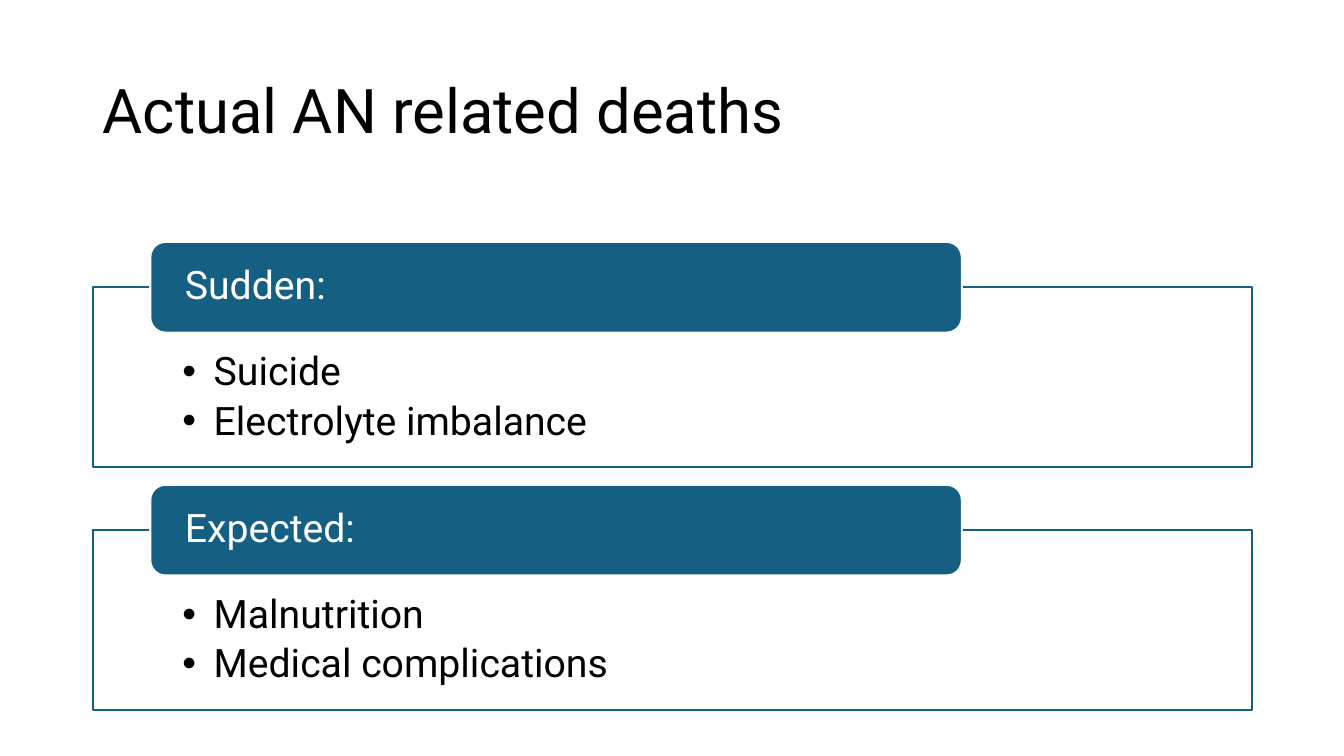
from lxml import etree
from pptx import Presentation
from pptx.dml.color import RGBColor
from pptx.enum.shapes import MSO_SHAPE
from pptx.enum.text import MSO_ANCHOR, PP_ALIGN
from pptx.oxml.ns import qn
from pptx.util import Inches, Pt

TITLE = "Actual AN related deaths"
GROUPS = [
    ("Sudden:", ["Suicide", "Electrolyte imbalance"]),
    ("Expected:", ["Malnutrition", "Medical complications"]),
]

BLUE = RGBColor(0x15, 0x60, 0x82)
WHITE = RGBColor(0xFF, 0xFF, 0xFF)
BLACK = RGBColor(0, 0, 0)
FONT = "Roboto"
RECT, ROUNDED = MSO_SHAPE.RECTANGLE, MSO_SHAPE.ROUNDED_RECTANGLE
TOP, MIDDLE, LEFT = MSO_ANCHOR.TOP, MSO_ANCHOR.MIDDLE, PP_ALIGN.LEFT

# Lengths in inches
MARGIN, WIDTH = 0.92, 11.5
FIRST_TOP, PITCH = 2.85, 2.41
BOX_H, LABEL_H = 1.78, 0.9
LABEL_INDENT, LABEL_W = 0.57, 0.7 * WIDTH
BULLET_INDENT = 0.31


def write(s, lines, size, color, anchor, insets, after=0):
    """Fill a shape with lines; insets are left, top, right, bottom."""
    tf = s.text_frame
    tf.word_wrap = True
    tf.vertical_anchor = anchor
    for side, inset in zip(("left", "top", "right", "bottom"), insets):
        setattr(tf, f"margin_{side}", Inches(inset))
    for i, line in enumerate(lines):
        p = tf.add_paragraph() if i else tf.paragraphs[0]
        for name, value in dict(alignment=LEFT, line_spacing=0.9,
                                space_after=Pt(after)).items():
            setattr(p, name, value)
        r = p.add_run()
        r.text = line
        for name, value in dict(name=FONT, size=Pt(size)).items():
            setattr(r.font, name, value)
        r.font.color.rgb = color
    return tf.paragraphs


def add_bullet(p):
    pPr = p._p.get_or_add_pPr()
    pPr.set("marL", str(Inches(BULLET_INDENT)))
    pPr.set("indent", str(-Inches(BULLET_INDENT)))
    etree.SubElement(pPr, qn("a:buFont")).set("typeface", "Arial")
    etree.SubElement(pPr, qn("a:buChar")).set("char", "•")


def add_panel(slide, kind, x, y, w, h, fill, line):
    s = slide.shapes.add_shape(kind, *map(Inches, (x, y, w, h)))
    s.shadow.inherit = False
    s.fill.solid()
    s.fill.fore_color.rgb = fill
    s.line.color.rgb = line
    s.line.width = Pt(1.5)
    return s


prs = Presentation()
prs.slide_width, prs.slide_height = Inches(13.33), Inches(7.5)
slide = prs.slides.add_slide(prs.slide_layouts[6])

title = slide.shapes.add_textbox(*map(Inches, (MARGIN, 0.4, WIDTH, 1.45)))
write(title, [TITLE], 44, BLACK, MIDDLE, (0.1, 0.05, 0.1, 0.05))

for i, (heading, causes) in enumerate(GROUPS):
    y = FIRST_TOP + i * PITCH
    box = add_panel(slide, RECT, MARGIN, y, WIDTH, BOX_H, WHITE, BLUE)
    for p in write(box, causes, 28, BLACK, TOP, (0.89, 0.64, 0.89, 0.22), 5):
        add_bullet(p)
    label = add_panel(slide, ROUNDED, MARGIN + LABEL_INDENT, y - LABEL_H / 2,
                      LABEL_W, LABEL_H, BLUE, WHITE)
    write(label, [heading], 28, WHITE, MIDDLE, (0.3, 0, 0.3, 0))

prs.save("out.pptx")
